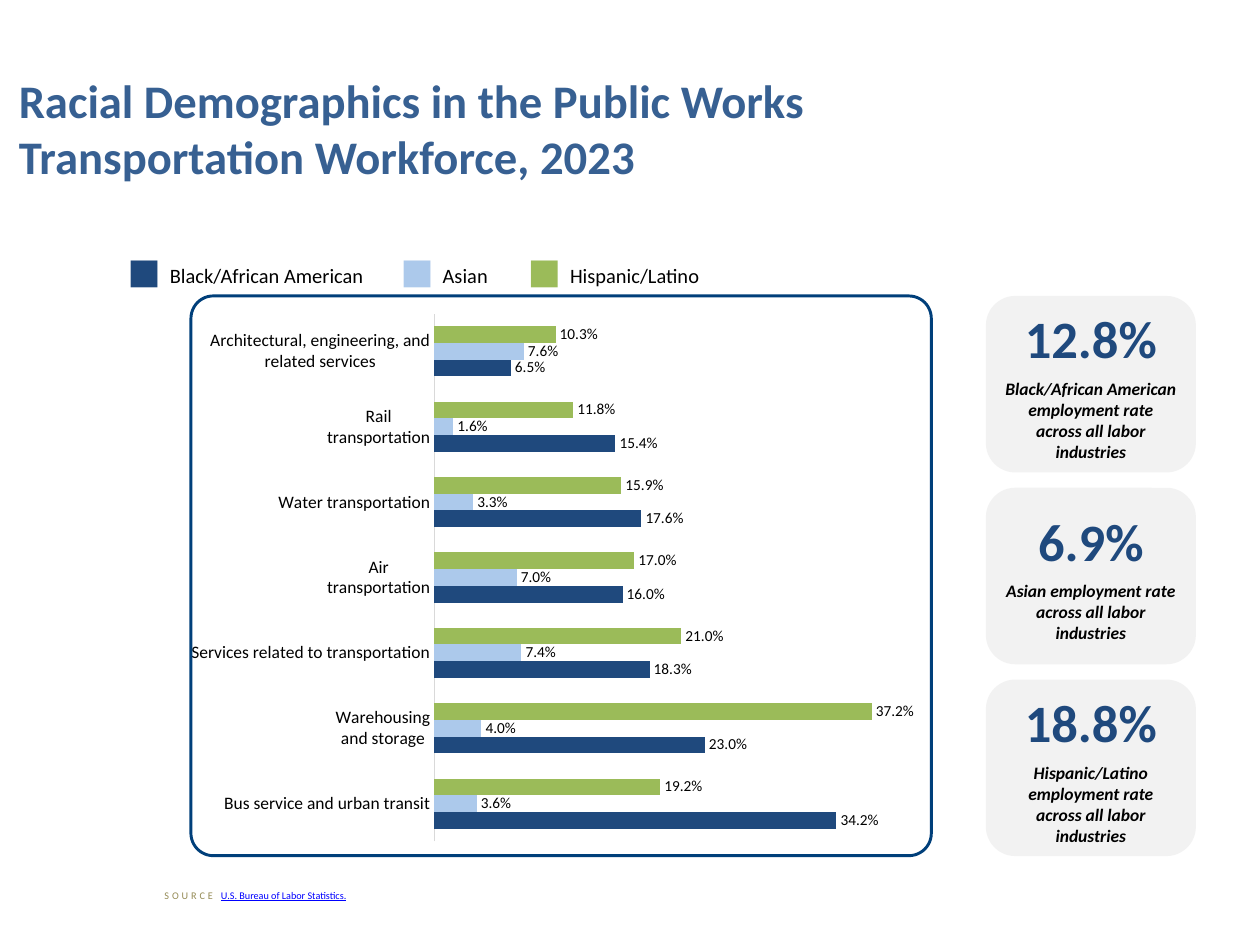
"""Builds a slide on racial demographics in the transportation workforce."""
from lxml import etree
from pptx import Presentation
from pptx.chart.data import CategoryChartData
from pptx.dml.color import RGBColor
from pptx.enum.chart import XL_CHART_TYPE, XL_LABEL_POSITION, XL_TICK_MARK
from pptx.enum.shapes import MSO_SHAPE
from pptx.enum.text import MSO_ANCHOR, MSO_AUTO_SIZE, PP_ALIGN
from pptx.oxml.ns import qn
from pptx.util import Cm, Pt

BAR = XL_CHART_TYPE.BAR_CLUSTERED
OUTER = XL_LABEL_POSITION.OUTSIDE_END
NO_TICK = XL_TICK_MARK.NONE
ROUND = MSO_SHAPE.ROUNDED_RECTANGLE
MIDDLE = MSO_ANCHOR.MIDDLE
NO_FIT = MSO_AUTO_SIZE.NONE
LEFT, CENTER = PP_ALIGN.LEFT, PP_ALIGN.CENTER
FACE = "Calibri"
NAVY, BLACK = "1F497D", "000000"


def color(code):
    return RGBColor.from_string(code)


def add_run(para, text, size, code, bold=False, italic=False):
    run = para.add_run()
    run.text = text
    font = run.font
    font.name, font.size = FACE, Pt(size)
    font.bold, font.italic = bold, italic
    font.color.rgb = color(code)
    return run


deck = Presentation()
deck.slide_width, deck.slide_height = Cm(30.48), Cm(22.86)
slide = deck.slides.add_slide(deck.slide_layouts[5])
shapes = slide.shapes

title = shapes.title
title.left, title.top, title.width, title.height = Cm(0.2), Cm(0.81), Cm(22.86), Cm(4.57)
frame = title.text_frame
frame.auto_size, frame.vertical_anchor = NO_FIT, MIDDLE
para = frame.paragraphs[0]
para.alignment = LEFT
add_run(para, "Racial Demographics in the Public Works Transportation Workforce, 2023",
        32, "376092", bold=True)

groups = [
    ("Black/African American", NAVY, "12.8%",
     [0.342, 0.23, 0.183, 0.16, 0.176, 0.154, 0.065]),
    ("Asian", "ACC9EB", "6.9%",
     [0.036, 0.04, 0.074, 0.07, 0.033, 0.016, 0.076]),
    ("Hispanic/Latino", "9BBB59", "18.8%",
     [0.192, 0.372, 0.21, 0.17, 0.159, 0.118, 0.103]),
]
data = CategoryChartData(number_format="0.0%")
data.categories = [
    "Bus service and urban transit", "Warehousing\nand storage",
    "Services related to transportation", "Air\ntransportation",
    "Water transportation", "Rail\ntransportation",
    "Architectural, engineering, and related services",
]
for name, code, rate, shares in groups:
    data.add_series(name, shares)
chart = shapes.add_chart(BAR, Cm(4.62), Cm(6.43), Cm(23.75), Cm(13.94), data).chart
chart.has_title = chart.has_legend = False
chart.font.name, chart.font.size = FACE, Pt(12)
chart.font.color.rgb = color(BLACK)

rows = chart.category_axis
rows.major_tick_mark = rows.minor_tick_mark = NO_TICK
rows.format.line.color.rgb = color("D9D9D9")
rows.format.line.width = Pt(0.75)
scale = chart.value_axis
scale.visible = scale.has_major_gridlines = False
scale.minimum_scale, scale.maximum_scale = 0, 0.4

plot = chart.plots[0]
plot.gap_width, plot.overlap = 150, 0
plot.vary_by_categories = False
for series, (name, code, rate, shares) in zip(plot.series, groups):
    series.format.fill.solid()
    series.format.fill.fore_color.rgb = color(code)
    labels = series.data_labels
    labels.show_value, labels.position = True, OUTER
    labels.number_format, labels.number_format_is_linked = "0.0%", False
    labels.font.name, labels.font.size = FACE, Pt(10.5)
    labels.font.color.rgb = color(BLACK)

area = chart._chartSpace.find(".//" + qn("c:plotArea"))
for old in area.findall(qn("c:layout")):
    area.remove(old)
layout = etree.Element(qn("c:layout"))
area.insert(0, layout)
manual = etree.SubElement(layout, qn("c:manualLayout"))
for tag, value in [("layoutTarget", "inner"), ("xMode", "edge"), ("yMode", "edge"),
                   ("x", "0.248"), ("y", "0.083"), ("w", "0.479"), ("h", "0.916")]:
    etree.SubElement(manual, qn("c:" + tag)).set("val", value)

border = shapes.add_shape(ROUND, Cm(4.62), Cm(7.16), Cm(17.91), Cm(13.54))
border.adjustments[0] = 0.04
border.shadow.inherit = False
border.fill.background()
border.line.color.rgb = color("003F7A")
border.line.width = Pt(2)

legend = shapes.add_textbox(Cm(2.84), Cm(5.89), Cm(22.3), Cm(1.27)).text_frame
legend.word_wrap = True
para = legend.paragraphs[0]
stops = etree.SubElement(para._p.get_or_add_pPr(), qn("a:tabLst"))
for stop in (1.02, 6.6, 7.62, 9.68, 10.7):
    etree.SubElement(stops, qn("a:tab"), pos=str(Cm(stop)), algn="l")
for place, (name, code, rate, shares) in enumerate(groups):
    add_run(para, "\t■" if place else "■", 24, code, bold=True)
    add_run(para, "\t" + name, 14, BLACK)

for place, (name, code, rate, shares) in enumerate(groups):
    card = shapes.add_shape(ROUND, Cm(23.85), Cm(7.16 + 4.64 * place), Cm(5.08), Cm(4.27))
    card.shadow.inherit = False
    card.fill.solid()
    card.fill.fore_color.rgb = color("F2F2F2")
    card.line.fill.background()
    frame = card.text_frame
    frame.word_wrap, frame.vertical_anchor = True, MIDDLE
    para = frame.paragraphs[0]
    para.alignment, para.space_after = CENTER, Pt(6)
    add_run(para, rate, 36, NAVY, bold=True)
    para = frame.add_paragraph()
    para.alignment = CENTER
    add_run(para, name + " employment rate across all labor industries",
            12, BLACK, bold=True, italic=True)

source = shapes.add_textbox(Cm(3.73), Cm(21.39), Cm(21.31), Cm(0.56)).text_frame
source.word_wrap = True
para = source.paragraphs[0]
lead = add_run(para, "SOURCE ", 7, "948A54")
lead.font._element.set("spc", "200")
cite = add_run(para, "U.S. Bureau of Labor Statistics.", 7, "0000FF")
cite.font.underline = True

deck.save("out.pptx")
